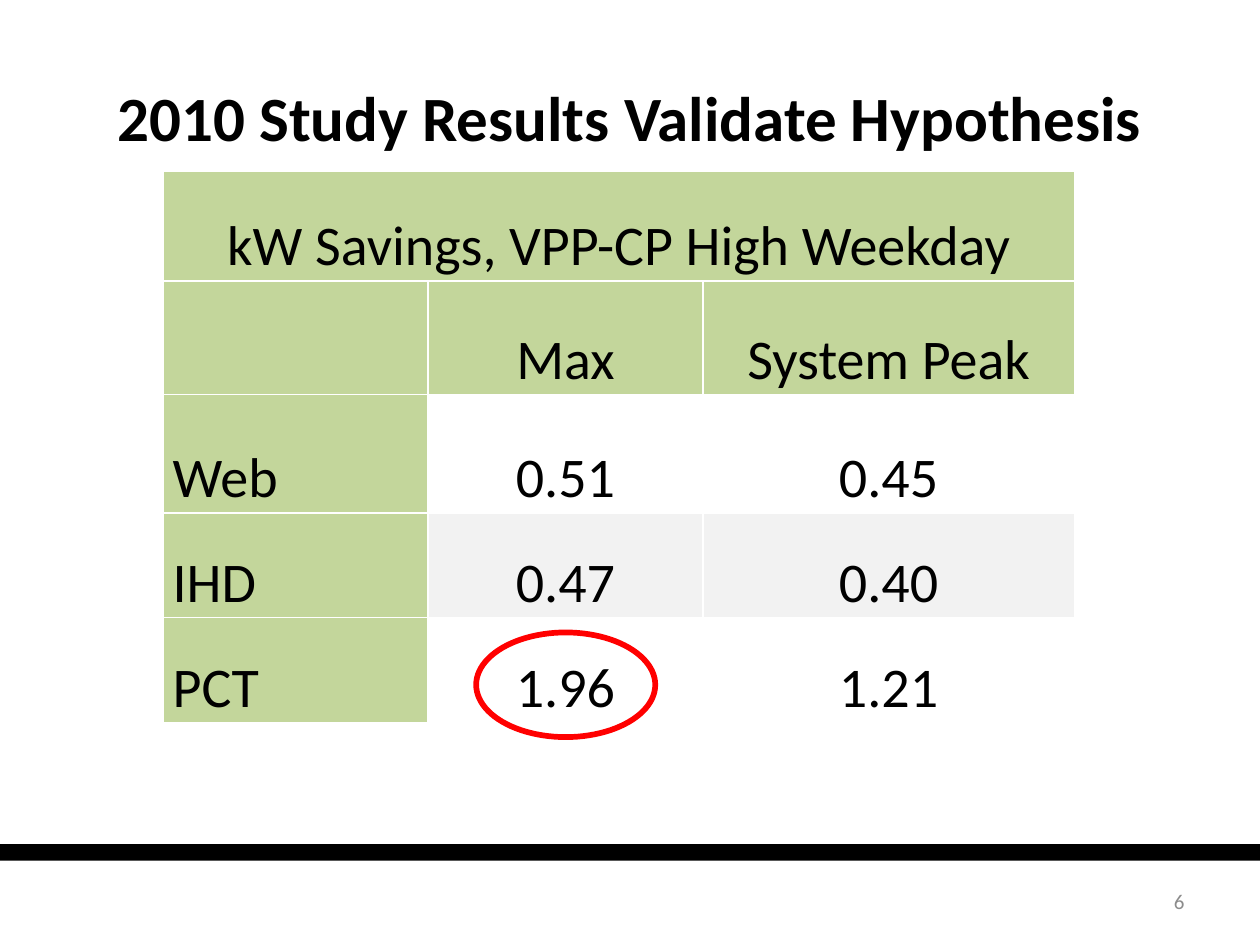
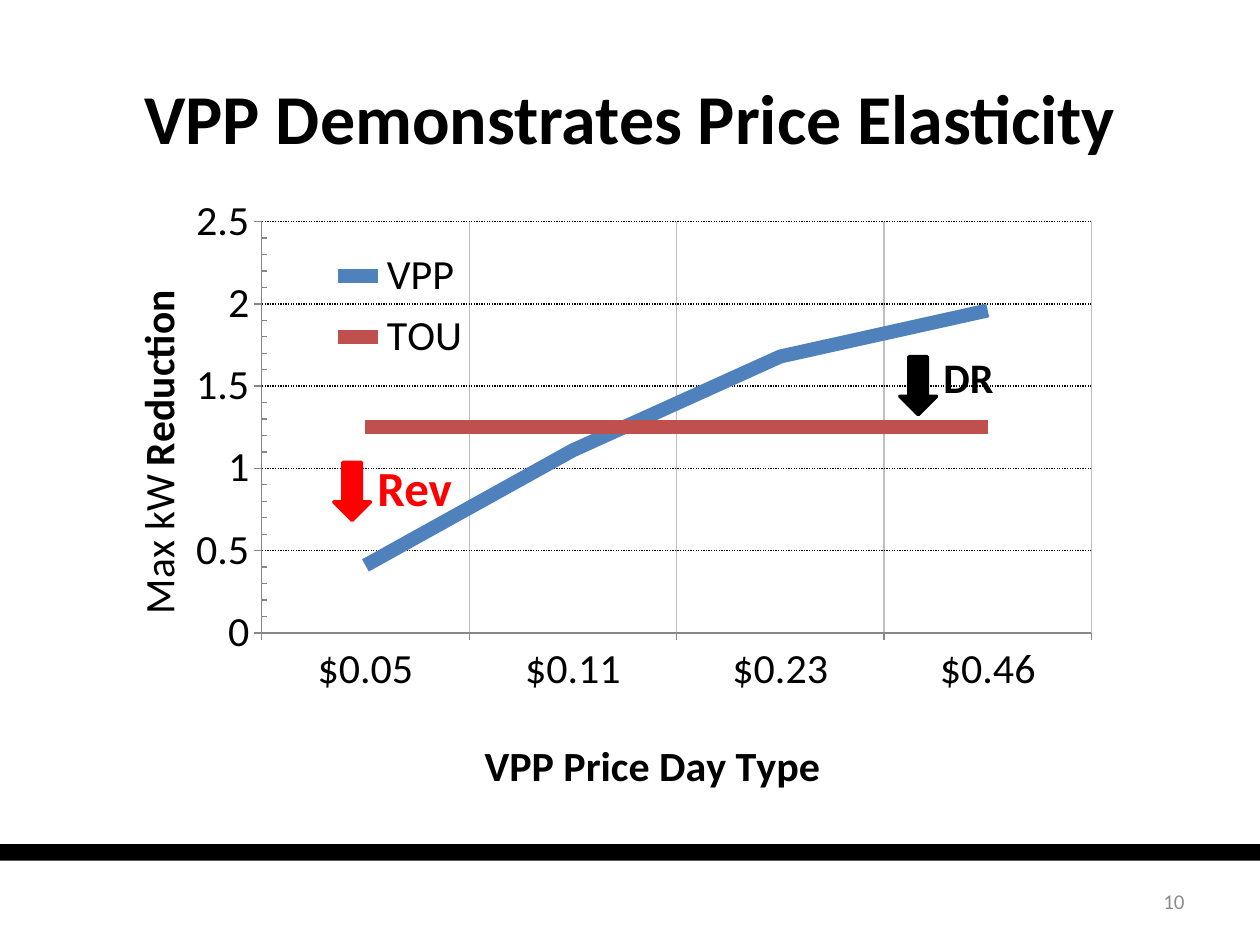
from lxml import etree
from pptx import Presentation
from pptx.chart.data import CategoryChartData
from pptx.dml.color import RGBColor
from pptx.enum.chart import XL_CHART_TYPE, XL_LEGEND_POSITION, XL_TICK_MARK
from pptx.enum.dml import MSO_LINE
from pptx.enum.shapes import MSO_SHAPE
from pptx.enum.text import MSO_ANCHOR, MSO_AUTO_SIZE, PP_ALIGN
from pptx.oxml.ns import qn
from pptx.util import Cm, Pt

LINE_CHART = XL_CHART_TYPE.LINE
LEGEND_RIGHT = XL_LEGEND_POSITION.RIGHT
TICK_INSIDE, TICK_OUTSIDE = XL_TICK_MARK.INSIDE, XL_TICK_MARK.OUTSIDE
DOTTED = MSO_LINE.ROUND_DOT
RECTANGLE, OVAL, DOWN_ARROW = MSO_SHAPE.RECTANGLE, MSO_SHAPE.OVAL, MSO_SHAPE.DOWN_ARROW
TOP, MIDDLE, BOTTOM = MSO_ANCHOR.TOP, MSO_ANCHOR.MIDDLE, MSO_ANCHOR.BOTTOM
NO_AUTOFIT = MSO_AUTO_SIZE.NONE
LEFT, CENTER, RIGHT = PP_ALIGN.LEFT, PP_ALIGN.CENTER, PP_ALIGN.RIGHT

FONT = "Calibri"
COLORS = {
    "black": "000000",
    "white": "FFFFFF",
    "red": "FF0000",
    "header": "C3D69B",
    "stripe": "F2F2F2",
    "number": "8C8C8C",
    "grid": "BFBFBF",
    "axis": "878787",
    "VPP": "4F81BD",
    "TOU": "C0504D",
}


def rgb(name):
    return RGBColor.from_string(COLORS[name])


def lengths(*values):
    return [Cm(value) for value in values]


def write_text(frame, text, size=32, color="black", bold=False, align=LEFT, anchor=None):
    if anchor is not None:
        frame.vertical_anchor = anchor
    paragraph = frame.paragraphs[0]
    paragraph.alignment = align
    run = paragraph.add_run()
    run.text = text
    run.font.name = FONT
    run.font.size = Pt(size)
    run.font.bold = bold
    run.font.color.rgb = rgb(color)


def add_text(shapes, box, text, **style):
    frame = shapes.add_textbox(*lengths(*box)).text_frame
    frame.word_wrap = True
    write_text(frame, text, **style)


def add_figure(shapes, kind, box, fill=None, line=None, width=1):
    shape = shapes.add_shape(kind, *lengths(*box))
    shape.shadow.inherit = False
    if fill:
        shape.fill.solid()
        shape.fill.fore_color.rgb = rgb(fill)
    else:
        shape.fill.background()
    if line:
        shape.line.color.rgb = rgb(line)
        shape.line.width = Pt(width)
    else:
        shape.line.fill.background()


def add_slide(presentation, title, title_size, number):
    slide = presentation.slides.add_slide(presentation.slide_layouts[5])
    add_figure(slide.shapes, RECTANGLE, (-0.08, 17.02, 25.5, 0.33), fill="black")
    heading = slide.shapes.title
    heading.left, heading.top, heading.width, heading.height = lengths(1.27, 0.76, 22.86, 3.18)
    heading.text_frame.auto_size = NO_AUTOFIT
    write_text(heading.text_frame, title, size=title_size, bold=True, align=CENTER, anchor=MIDDLE)
    add_text(slide.shapes, (18.21, 17.65, 5.92, 1.02), number,
             size=12, color="number", align=RIGHT, anchor=MIDDLE)
    return slide


def set_borders(cell, color):
    properties = cell._tc.get_or_add_tcPr()
    for index, side in enumerate(("lnL", "lnR", "lnT", "lnB")):
        border = etree.Element(qn(f"a:{side}"), w=str(Pt(1)))
        fill = etree.SubElement(border, qn("a:solidFill"))
        etree.SubElement(fill, qn("a:srgbClr"), val=COLORS[color])
        properties.insert(index, border)


def cell_fill(row, column):
    if row < 2 or column == 0:
        return "header"
    return "stripe" if row % 2 else "white"


def add_savings_table(slide, rows, widths, heights):
    box = lengths(3.3, 3.45, sum(widths), sum(heights))
    table = slide.shapes.add_table(len(rows), len(widths), *box).table
    table.first_row = table.horz_banding = False
    for column, width in zip(table.columns, widths):
        column.width = Cm(width)
    for row, height in zip(table.rows, heights):
        row.height = Cm(height)
    for row, texts in enumerate(rows):
        for column, text in enumerate(texts):
            cell = table.cell(row, column)
            cell.margin_left = cell.margin_right = Cm(0.18)
            cell.margin_top = cell.margin_bottom = 0
            cell.vertical_anchor = BOTTOM
            cell.fill.solid()
            cell.fill.fore_color.rgb = rgb(cell_fill(row, column))
            set_borders(cell, "white")
            if text:
                align = LEFT if column == 0 and row else CENTER
                write_text(cell.text_frame, text, align=align)
    table.cell(0, 0).merge(table.cell(0, len(widths) - 1))


def place_chart_part(chart, query, index, inner=False, **position):
    part = chart.element.xpath(query)[0]
    for old_layout in part.findall(qn("c:layout")):
        part.remove(old_layout)
    layout = etree.Element(qn("c:layout"))
    manual = etree.SubElement(layout, qn("c:manualLayout"))
    settings = {"layoutTarget": "inner"} if inner else {}
    settings.update(xMode="edge", yMode="edge", **position)
    for name, value in settings.items():
        etree.SubElement(manual, qn(f"c:{name}"), val=str(value))
    part.insert(index, layout)


def style_axis(axis, grid_color):
    axis.major_tick_mark = TICK_OUTSIDE
    axis.format.line.color.rgb = rgb("axis")
    axis.has_major_gridlines = True
    grid = axis.major_gridlines.format.line
    grid.color.rgb = rgb(grid_color)
    grid.width = Pt(0.75)
    return grid


def add_price_chart(slide, categories, series_values):
    data = CategoryChartData()
    data.categories = categories
    for name, values in series_values.items():
        data.add_series(name, values)
    chart = slide.shapes.add_chart(LINE_CHART, *lengths(2.18, 3.86, 20.65, 12.37), data).chart
    chart.has_title = False
    chart.font.name = FONT
    chart.font.size = Pt(24)
    chart.font.color.rgb = rgb("black")
    chart.plots[0].vary_by_categories = False
    for series in chart.plots[0].series:
        series.smooth = False
        series.format.line.color.rgb = rgb(series.name)
        series.format.line.width = Pt(8)

    style_axis(chart.category_axis, "grid")
    value_axis = chart.value_axis
    style_axis(value_axis, "black").dash_style = DOTTED
    value_axis.minimum_scale, value_axis.maximum_scale = 0, 2.5
    value_axis.major_unit, value_axis.minor_unit = 0.5, 0.1
    value_axis.minor_tick_mark = TICK_INSIDE
    value_axis.tick_labels.number_format = "General"
    value_axis.tick_labels.number_format_is_linked = False

    write_text(chart.category_axis.axis_title.text_frame, "VPP Price Day Type",
               size=24, bold=True, align=CENTER)
    value_title = value_axis.axis_title.text_frame
    write_text(value_title, "Max kW ", size=24, align=CENTER)
    write_text(value_title, "Reduction", size=24, bold=True, align=CENTER)
    rotation = chart.element.xpath("//c:valAx/c:title//a:bodyPr")[0]
    rotation.set("rot", "-5400000")
    rotation.set("vert", "horz")

    chart.has_legend = True
    chart.legend.position = LEGEND_RIGHT
    chart.legend.include_in_layout = False
    place_chart_part(chart, "//c:plotArea", 0, inner=True, x=0.15, y=0.05, w=0.81, h=0.68)
    place_chart_part(chart, "//c:legend", 1, x=0.2, y=0.08, w=0.17, h=0.22)
    place_chart_part(chart, "//c:catAx/c:title", 1, x=0.36, y=0.89)
    place_chart_part(chart, "//c:valAx/c:title", 1, x=0.02, y=0.16)


def add_arrow_label(slide, left, top, text, size, color):
    shapes = slide.shapes.add_group_shape().shapes
    add_figure(shapes, DOWN_ARROW, (left, top, 0.74, 1.17), fill=color, line=color, width=2)
    add_text(shapes, (left + 0.63, top - 0.23, 2.03, 1.3), text,
             size=size, color=color, bold=True, anchor=TOP)


def main():
    presentation = Presentation()
    presentation.slide_width, presentation.slide_height = lengths(25.4, 19.05)

    results = add_slide(presentation, "2010 Study Results Validate Hypothesis", 36, "6")
    rows = [
        ("kW Savings, VPP-CP High Weekday", "", ""),
        ("", "Max", "System Peak"),
        ("Web", "0.51", "0.45"),
        ("IHD", "0.47", "0.40"),
        ("PCT", "1.96", "1.21"),
    ]
    add_savings_table(results, rows, (5.33, 5.54, 7.49), (2.21, 2.29, 2.39, 2.11, 2.11))
    add_figure(results.shapes, OVAL, (9.6, 12.75, 3.61, 2.11), line="red", width=3.25)

    elasticity = add_slide(presentation, "VPP Demonstrates Price Elasticity", 40, "10")
    add_price_chart(
        elasticity,
        ("$0.05", "$0.11", "$0.23", "$0.46"),
        {"VPP": (0.41, 1.11, 1.68, 1.96), "TOU": (1.25,) * 4},
    )
    add_arrow_label(elasticity, 18.14, 7.19, "DR", 24, "black")
    add_arrow_label(elasticity, 6.73, 9.32, "Rev", 28, "red")

    presentation.save("out.pptx")


if __name__ == "__main__":
    main()
